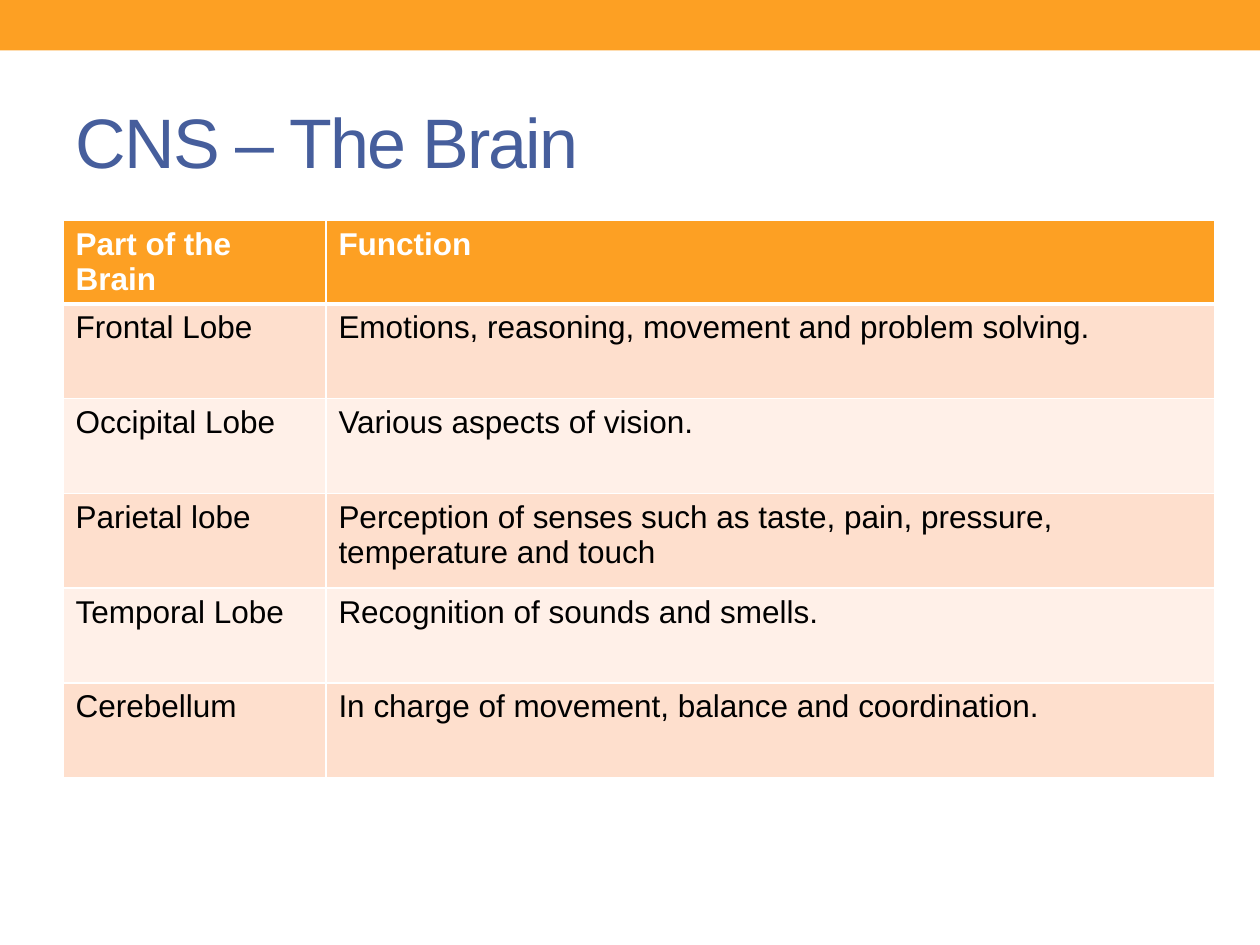
from lxml import etree
from pptx import Presentation
from pptx.dml.color import RGBColor
from pptx.enum import shapes, text
from pptx.oxml import ns
from pptx.util import Cm, Pt

ORANGE = RGBColor(0xFD, 0xA0, 0x23)
BLUE = RGBColor(0x46, 0x5E, 0x9C)
WHITE = RGBColor(0xFF, 0xFF, 0xFF)
BLACK = RGBColor(0, 0, 0)
PEACH = RGBColor(0xFE, 0xDF, 0xCD)
CREAM = RGBColor(0xFF, 0xF0, 0xE8)
FONT = "Arial"

ROWS = [
    ("Part of the Brain", "Function"),
    ("Frontal Lobe", "Emotions, reasoning, movement and problem solving."),
    ("Occipital Lobe", "Various aspects of vision."),
    ("Parietal lobe", "Perception of senses such as taste, pain, pressure, temperature and touch"),
    ("Temporal Lobe", "Recognition of sounds and smells."),
    ("Cerebellum", "In charge of movement, balance and coordination."),
]
COLUMN_WIDTHS = (Cm(5.3), Cm(17.92))
HEADER_HEIGHT = Cm(1.47)
ROW_HEIGHT = Cm(1.91)


def style_font(p, size, color, bold=False):
    p.font.name = FONT
    p.font.size = Pt(size)
    p.font.bold = bold
    p.font.color.rgb = color


def add_band(s, width):
    sp = s.shapes.add_shape(shapes.MSO_SHAPE.RECTANGLE, 0, 0, width, Cm(1.02))
    sp.shadow.inherit = False
    sp.fill.solid()
    sp.fill.fore_color.rgb = ORANGE
    sp.line.fill.background()


def set_title(s, wording):
    sp = s.shapes.title
    sp.left, sp.top, sp.width, sp.height = Cm(1.27), Cm(1.47), Cm(22.86), Cm(2.74)
    tf = sp.text_frame
    tf.text = wording
    tf.vertical_anchor = text.MSO_ANCHOR.MIDDLE
    p = tf.paragraphs[0]
    p.alignment = text.PP_ALIGN.LEFT
    style_font(p, 40, BLUE)
    p.runs[0].font._element.set("spc", "-100")


def set_border(cell, side, width):
    ln = etree.SubElement(cell._tc.get_or_add_tcPr(), ns.qn(f"a:ln{side}"), w=str(Pt(width)))
    fill = etree.SubElement(ln, ns.qn("a:solidFill"))
    etree.SubElement(fill, ns.qn("a:srgbClr"), val=str(WHITE))


def fill_cell(cell, wording, row):
    header = row == 0
    for side in "LRTB":
        thick = (row, side) in ((0, "B"), (1, "T"))
        set_border(cell, side, 3 if thick else 1)
    cell.fill.solid()
    cell.fill.fore_color.rgb = ORANGE if header else PEACH if row % 2 else CREAM
    cell.text = wording
    style_font(cell.text_frame.paragraphs[0], 18, WHITE if header else BLACK, header)


def add_function_table(s):
    heights = [HEADER_HEIGHT] + [ROW_HEIGHT] * (len(ROWS) - 1)
    table = s.shapes.add_table(
        len(ROWS), len(COLUMN_WIDTHS), Cm(1.27), Cm(4.45), sum(COLUMN_WIDTHS), sum(heights)
    ).table
    for column, width in zip(table.columns, COLUMN_WIDTHS):
        column.width = width
    for i, (wordings, height) in enumerate(zip(ROWS, heights)):
        table.rows[i].height = height
        for j, wording in enumerate(wordings):
            fill_cell(table.cell(i, j), wording, i)


def main():
    prs = Presentation()
    prs.slide_width, prs.slide_height = Cm(25.4), Cm(19.05)
    s = prs.slides.add_slide(prs.slide_layouts[5])
    add_band(s, prs.slide_width)
    set_title(s, "CNS – The Brain")
    add_function_table(s)
    prs.save("out.pptx")


if __name__ == "__main__":
    main()
